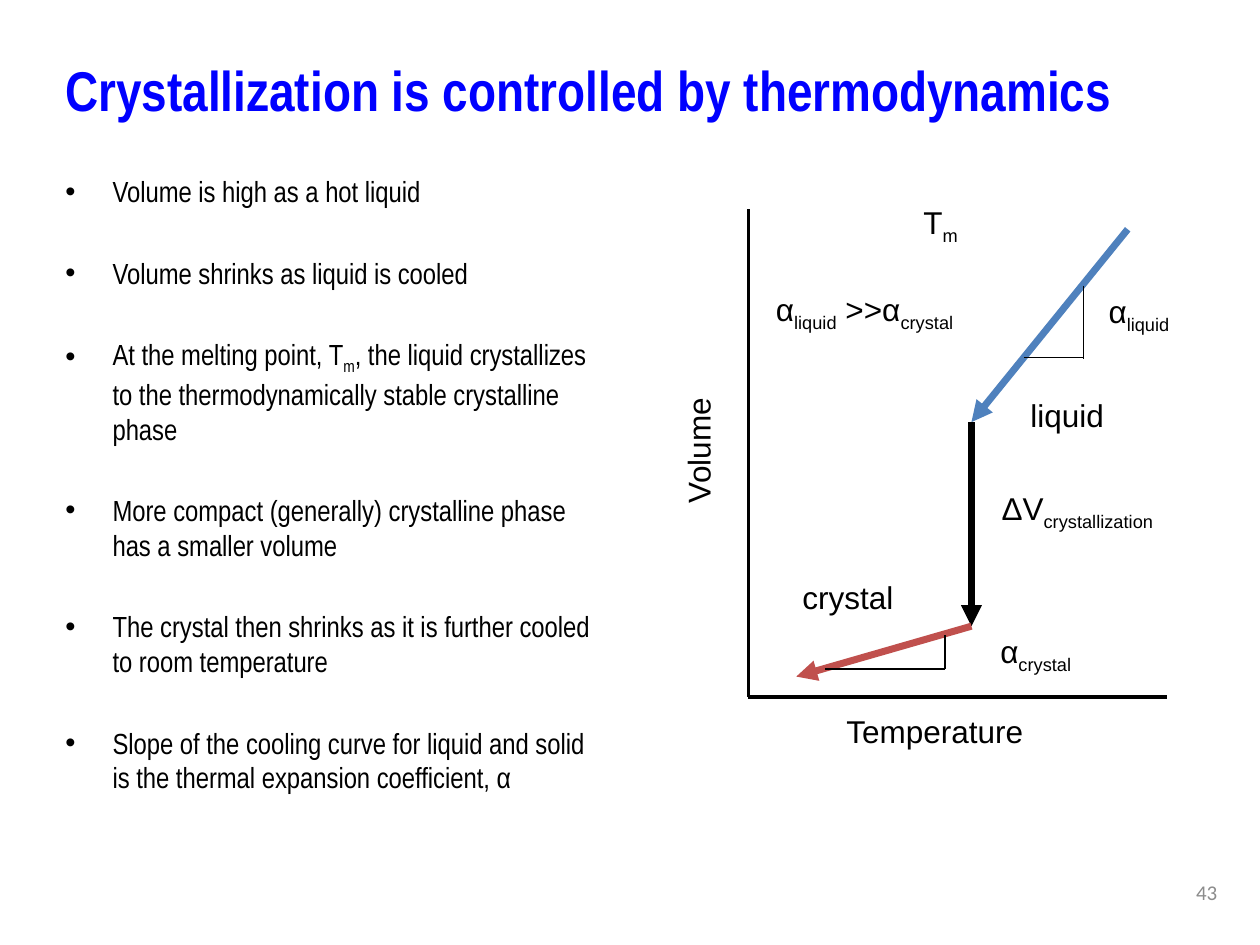
from dataclasses import dataclass

from lxml import etree
from pptx import Presentation
from pptx import util as u
from pptx.dml.color import RGBColor
from pptx.enum import shapes, text
from pptx.oxml.ns import qn

BLACK = RGBColor(0x00, 0x00, 0x00)
TITLE_BLUE = RGBColor(0x00, 0x00, 0xFF)
LIQUID_BLUE = RGBColor(0x4F, 0x81, 0xBD)
CRYSTAL_RED = RGBColor(0xC0, 0x50, 0x4D)
NUMBER_GRAY = RGBColor(0x8C, 0x8C, 0x8C)

# The slide is a grid of 100 columns by 75 rows of square cells
COLUMNS, ROWS = 100, 75
CELL = u.Inches(0.1)

BULLET_SIZE = 16.6
BULLET_INDENT = u.Inches(0.375)
BULLET_GAP = 26.6


@dataclass(frozen=True)
class Area:
    column: float
    row: float
    columns: float
    rows: float


@dataclass(frozen=True)
class Label:
    content: str
    area: Area
    wrap: bool = False
    rotation: int = 0


@dataclass(frozen=True)
class Stroke:
    start: tuple[float, float]
    end: tuple[float, float]
    width: float
    color: RGBColor = BLACK
    arrow: bool = False


MELT_LIQUID = (77.1, 33.5)
MELT_CRYSTAL = (77.1, 49.7)
ORIGIN = (59.4, 55.3)

STROKES = [
    # Axes
    Stroke((59.4, 16.6), ORIGIN, 2),
    Stroke(ORIGIN, (92.6, 55.3), 2.25),
    # Cooling curve
    Stroke((89.5, 18.2), MELT_LIQUID, 4, LIQUID_BLUE, arrow=True),
    Stroke(MELT_LIQUID, MELT_CRYSTAL, 4, arrow=True),
    Stroke(MELT_CRYSTAL, (63.2, 53.7), 4, CRYSTAL_RED, arrow=True),
    # Slope triangles
    Stroke((86, 22.7), (86, 28.5), 0.75),
    Stroke((86, 28.4), (81.3, 28.4), 0.75),
    Stroke((75, 50.4), (75, 53.1), 0.75),
    Stroke((75, 53.1), (65.5, 53.1), 0.75),
]

# Bars enclose subscripts
LABELS = [
    Label("Temperature", Area(66.2, 56, 17.6, 4.8)),
    Label("Volume", Area(49.5, 32.4, 12.4, 4.6), rotation=270),
    Label("liquid", Area(80.8, 30.9, 9.1, 4.8)),
    Label("crystal", Area(62.7, 45.4, 10.1, 4.8)),
    Label("T|m|", Area(72.3, 15.6, 5.4, 4.8)),
    Label("α|liquid|", Area(87, 22.7, 8.6, 4.8), wrap=True),
    Label("α|crystal|", Area(78.4, 49.7, 12.2, 4.8), wrap=True),
    Label("α|liquid| >>α|crystal|", Area(60.6, 22.5, 20.4, 4.8)),
    Label("ΔV|crystallization|", Area(78.5, 38.3, 19.1, 5), wrap=True),
]

BULLETS = [
    "Volume is high as a hot liquid",
    "Volume shrinks as liquid is cooled",
    "At the melting point, T|m|, the liquid crystallizes to the "
    "thermodynamically stable crystalline phase",
    "More compact (generally) crystalline phase has a smaller volume",
    "The crystal then shrinks as it is further cooled to room temperature",
    "Slope of the cooling curve for liquid and solid is the thermal "
    "expansion coefficient, α",
]


def cells(count: float) -> int:
    return round(count * CELL)


def add_text(page, area: Area, *contents: str, size: float = 18,
             font: str = "Arial", color: RGBColor = BLACK, bold: bool = False,
             wrap: bool = True, grow: bool = False,
             anchor=text.MSO_ANCHOR.TOP, align=text.PP_ALIGN.LEFT):
    """Add a text box with one paragraph per content; bars enclose subscripts."""
    box = page.shapes.add_textbox(cells(area.column), cells(area.row),
                                  cells(area.columns), cells(area.rows))
    frame = box.text_frame
    frame.word_wrap = wrap
    frame.vertical_anchor = anchor
    frame.auto_size = (text.MSO_AUTO_SIZE.SHAPE_TO_FIT_TEXT if grow
                       else text.MSO_AUTO_SIZE.NONE)
    for index, content in enumerate(contents):
        para = frame.paragraphs[0] if index == 0 else frame.add_paragraph()
        para.alignment = align
        for position, part in enumerate(content.split("|")):
            if not part:
                continue
            span = para.add_run()
            span.text = part
            span.font.name = font
            span.font.size = u.Pt(size)
            span.font.bold = bold
            span.font.color.rgb = color
            if position % 2:
                span.font._element.set("baseline", "-25000")
    return box


def add_bullets(page, area: Area, items: list[str]) -> None:
    box = add_text(page, area, *items, size=BULLET_SIZE, font="Arial Narrow")
    for index, para in enumerate(box.text_frame.paragraphs):
        para.space_before = u.Pt(BULLET_GAP if index else 3.3)
        properties = para._p.get_or_add_pPr()
        properties.set("marL", str(BULLET_INDENT))
        properties.set("indent", str(-BULLET_INDENT))
        etree.SubElement(properties, qn("a:buFont")).set("typeface", "Arial")
        etree.SubElement(properties, qn("a:buChar")).set("char", "•")


def add_label(page, label: Label) -> None:
    box = add_text(page, label.area, label.content, wrap=label.wrap, grow=True)
    box.rotation = label.rotation


def add_stroke(page, stroke: Stroke) -> None:
    ends = [cells(value) for value in (*stroke.start, *stroke.end)]
    line = page.shapes.add_connector(shapes.MSO_CONNECTOR.STRAIGHT, *ends)
    line.line.color.rgb = stroke.color
    line.line.width = u.Pt(stroke.width)
    if stroke.arrow:
        outline = line.line._get_or_add_ln()
        etree.SubElement(outline, qn("a:tailEnd")).set("type", "triangle")
    etree.SubElement(line._element.spPr, qn("a:effectLst"))


def main() -> None:
    deck = Presentation()
    deck.slide_width, deck.slide_height = cells(COLUMNS), cells(ROWS)
    page = deck.slides.add_slide(deck.slide_layouts[6])

    # Title, bullets and page number
    add_text(page, Area(4.2, 3.3, 91.5, 7.5),
             "Crystallization is controlled by thermodynamics",
             size=32, font="Arial Narrow", color=TITLE_BLUE, bold=True,
             anchor=text.MSO_ANCHOR.MIDDLE)
    add_bullets(page, Area(4.2, 13.3, 45, 52.5), BULLETS)
    add_text(page, Area(76.8, 68.3, 20.8, 5), "43", size=12, font="Calibri",
             color=NUMBER_GRAY, anchor=text.MSO_ANCHOR.MIDDLE,
             align=text.PP_ALIGN.RIGHT)

    # Volume against temperature diagram
    for stroke in STROKES:
        add_stroke(page, stroke)
    for label in LABELS:
        add_label(page, label)

    deck.save("out.pptx")


if __name__ == "__main__":
    main()
